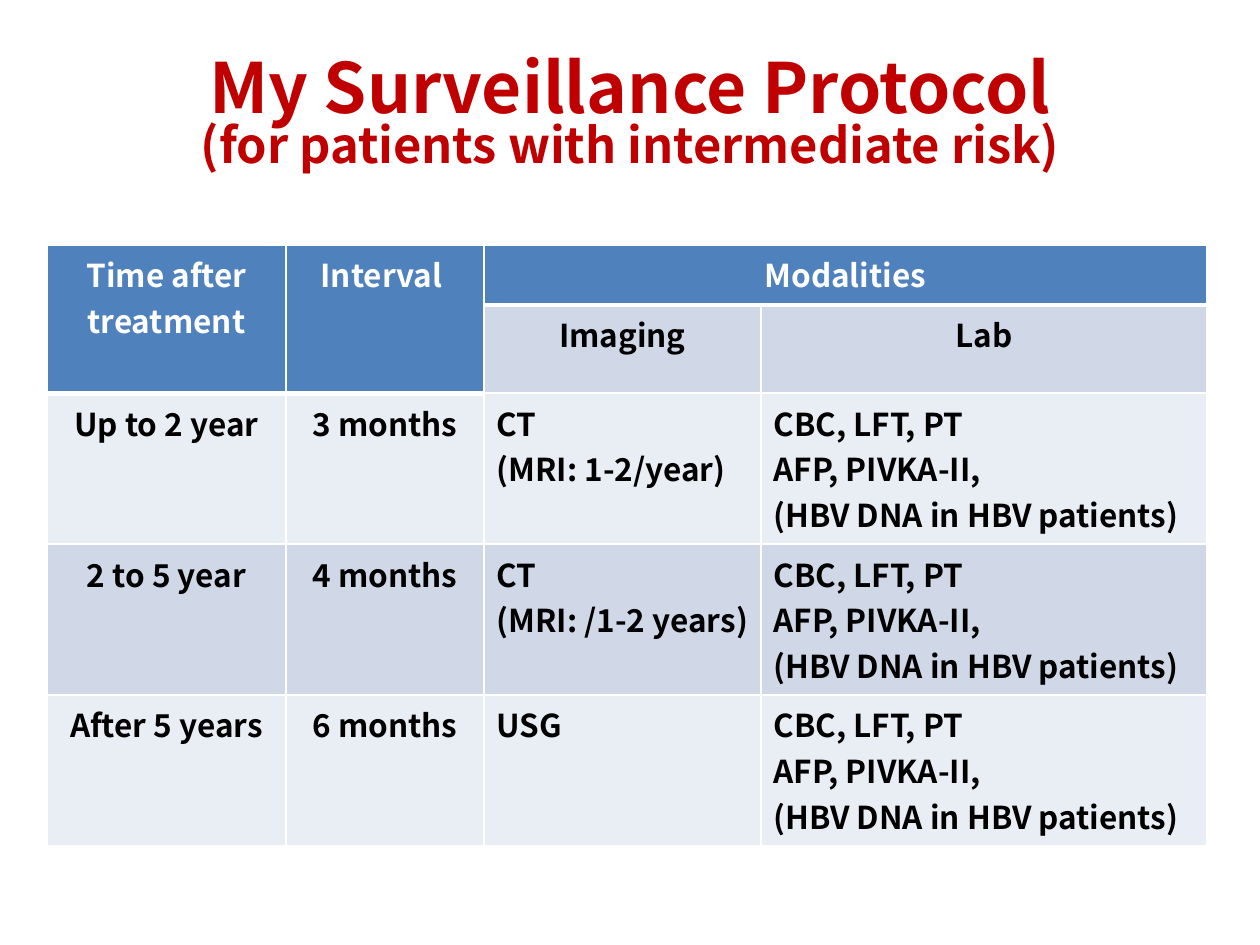
from lxml import etree
from pptx import Presentation
from pptx import util as u
from pptx.dml.color import RGBColor
from pptx.enum import text
from pptx.oxml.ns import qn

PX = 914400 // 126
RED = RGBColor(0xC0, 0x00, 0x00)
WHITE = RGBColor(0xFF, 0xFF, 0xFF)
BLACK = RGBColor(0x00, 0x00, 0x00)
BLUE = RGBColor(0x4F, 0x81, 0xBD)
BAND = RGBColor(0xD0, 0xD8, 0xE8)
PALE = RGBColor(0xE9, 0xED, 0xF4)

LAB = "CBC, LFT, PT\nAFP, PIVKA-II,\n(HBV DNA in HBV patients)"
ROWS = [
    ["Time after treatment", "Interval ", "Modalities", ""],
    ["", "", "Imaging", "Lab"],
    ["Up to 2 year", "3 months", "CT\n(MRI: 1-2/year)", LAB],
    ["2 to 5 year", "4 months", "CT\n(MRI: /1-2 years)", LAB],
    ["After 5 years", "6 months", "USG", LAB],
]
COLUMN_WIDTHS = [239, 198, 277, 446]
ROW_HEIGHTS = [60, 60, 151, 151, 151]
MERGES = [((0, 0), (1, 0)), ((0, 1), (1, 1)), ((0, 2), (0, 3))]


class SlideBuilder:
    font_name = "Noto Sans CJK KR"

    def __init__(self, slide):
        self.slide = slide

    def format_run(self, run, size, color):
        run.font.name = self.font_name
        run.font.size = u.Pt(size)
        run.font.bold = True
        run.font.color.rgb = color

    def title(self, left, top, width, height, content, sizes, color):
        box = self.slide.shapes.add_textbox(
            *(value * PX for value in (left, top, width, height)))
        frame = box.text_frame
        frame.word_wrap = True
        frame.vertical_anchor = text.MSO_ANCHOR.MIDDLE
        frame.text = content
        paragraph = frame.paragraphs[0]
        paragraph.alignment = text.PP_ALIGN.CENTER
        paragraph.line_spacing = 0.8
        for run, size in zip(paragraph.runs, sizes):
            self.format_run(run, size, color)

    def border(self, cell, side, width):
        properties = cell._tc.get_or_add_tcPr()
        line = etree.SubElement(properties, qn(f"a:ln{side}"), w=str(u.Pt(width)))
        fill = etree.SubElement(line, qn("a:solidFill"))
        etree.SubElement(fill, qn("a:srgbClr"), val=str(WHITE))

    def cell(self, cell, content, fill, color, alignment, bottom):
        for side in "LRT":
            self.border(cell, side, 1)
        self.border(cell, "B", bottom)
        cell.fill.solid()
        cell.fill.fore_color.rgb = fill
        cell.text_frame.text = content
        for paragraph in cell.text_frame.paragraphs:
            paragraph.alignment = alignment
            for run in paragraph.runs:
                self.format_run(run, 18, color)

    def table(self, left, top, rows, widths, heights, merges):
        frame = self.slide.shapes.add_table(
            len(rows), len(widths), left * PX, top * PX,
            sum(widths) * PX, sum(heights) * PX)
        table = frame.table
        for column, width in zip(table.columns, widths):
            column.width = width * PX
        for row, height in zip(table.rows, heights):
            row.height = height * PX
        for first, last in merges:
            table.cell(*first).merge(table.cell(*last))
        for r, row in enumerate(rows):
            for c, content in enumerate(row):
                header = r == 0 or (r == 1 and c < 2)
                fill = BLUE if header else (BAND if r % 2 else PALE)
                centered = r < 2 or c < 2
                self.cell(
                    table.cell(r, c), content, fill,
                    WHITE if header else BLACK,
                    text.PP_ALIGN.CENTER if centered else text.PP_ALIGN.LEFT,
                    3 if header else 1)


def main():
    presentation = Presentation()
    presentation.slide_width = u.Inches(10)
    presentation.slide_height = u.Inches(7.5)
    slide = presentation.slides.add_slide(presentation.slide_layouts[6])
    builder = SlideBuilder(slide)
    builder.title(
        63, 38, 1134, 157,
        "My Surveillance Protocol\v(for patients with intermediate risk)",
        [39.6, 27.9], RED)
    builder.table(47, 245, ROWS, COLUMN_WIDTHS, ROW_HEIGHTS, MERGES)
    presentation.save("out.pptx")


if __name__ == "__main__":
    main()
